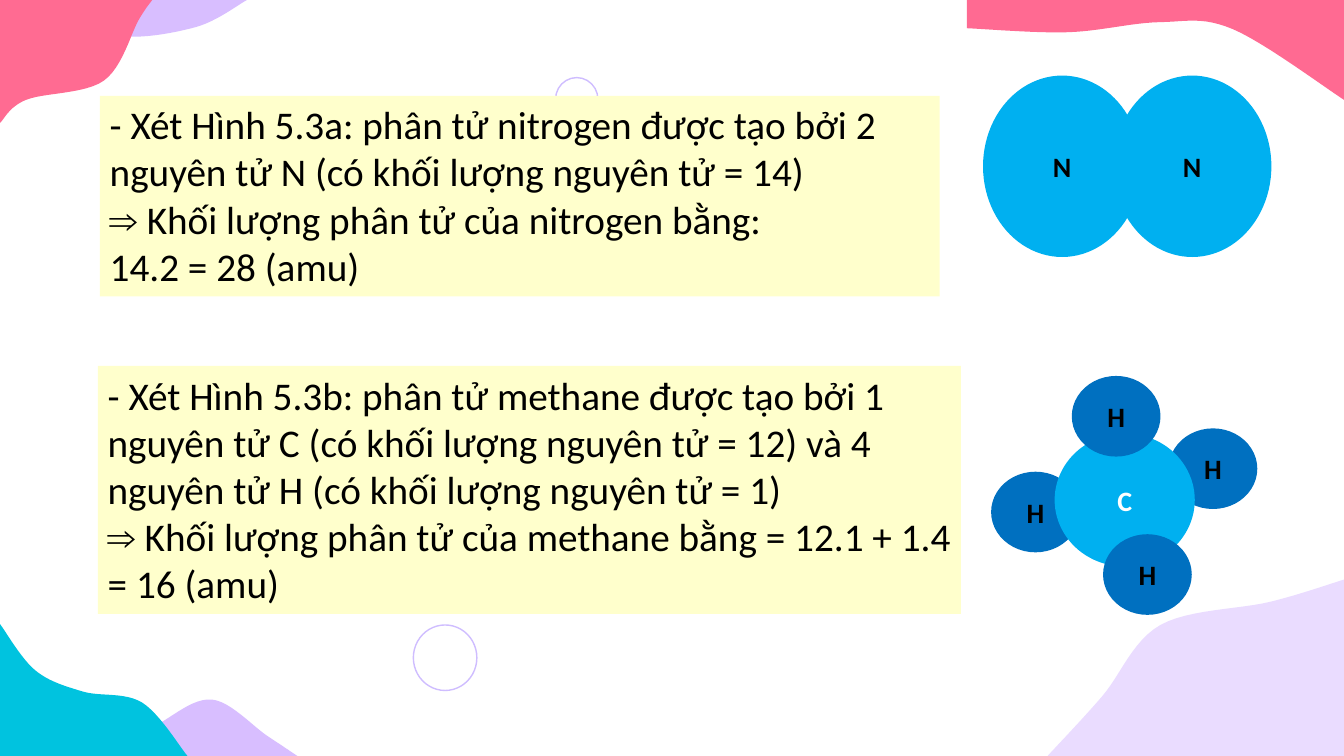
from pptx import Presentation
from pptx.dml.color import RGBColor
from pptx.enum.shapes import MSO_SHAPE
from pptx.enum.text import MSO_ANCHOR, PP_ALIGN
from pptx.util import Cm, Pt

COLORS = {
    "lilac": "D8BEFF", "rose": "FF6B92", "teal": "00C3DF", "ring": "CFBDFF",
    "lavender": "EADCFF", "coral": "FF6A92", "cream": "FFFFCC",
    "sky": "00B0F0", "blue": "0070C0", "black": "000000", "white": "FFFFFF",
}

# All content lengths are in inches.
WIDTH, HEIGHT = 13.33, 7.5
CURVE_STEPS = 12

# Colour, points on the wavy edge, corners that close the outline
BLOBS = [
    ("lilac", [(0.81, 0), (1.18, 0.35), (1.94, 0.27), (2.45, 0)], []),
    ("rose", [(0, 1.22), (0.26, 0.99), (1.03, 0.8), (1.38, 0.19), (1.51, 0)], [(0, 0)]),
    ("lilac", [(1.03, HEIGHT), (1.54, 7.2), (2.1, 6.94), (2.65, 7.3), (2.95, HEIGHT)], []),
    ("teal", [(0, 6.19), (0.35, 6.65), (0.82, 6.86), (1.41, 6.97), (1.86, HEIGHT)],
     [(0, HEIGHT)]),
    ("lavender", [(WIDTH, 5.75), (12.6, 5.97), (11.51, 6.2), (10.93, 6.91), (10.39, HEIGHT)],
     [(WIDTH, HEIGHT)]),
    ("coral", [(9.59, 0.28), (10.59, 0.32), (11.5, 0.22), (12.23, 0.29), (WIDTH, 0.99)],
     [(WIDTH, 0), (9.59, 0)]),
]
RINGS = [(4.1, 6.2, 0.63, 0.65), (5.51, 0.77, 0.42, 0.43)]

ARROW = "⇒"
EXPLANATIONS = [
    ((0.99, 0.95, 8.33, 1.99), [
        "- Xét Hình 5.3a: phân tử nitrogen được tạo bởi 2 nguyên tử N "
        "(có khối lượng nguyên tử = 14)",
        "⇒ Khối lượng phân tử của nitrogen bằng:",
        "14.2 = 28 (amu)"]),
    ((0.97, 3.63, 8.56, 2.46), [
        "- Xét Hình 5.3b: phân tử methane được tạo bởi 1 nguyên tử C "
        "(có khối lượng nguyên tử = 12) và 4 nguyên tử H (có khối lượng nguyên tử = 1)",
        "⇒ Khối lượng phân tử của methane bằng = 12.1 + 1.4 = 16 (amu)"]),
]

# Symbol: width, height, fill, text colour
ATOMS = {
    "N": (1.57, 1.8, "sky", "black"),
    "C": (1.39, 1.32, "sky", "white"),
    "H": (0.88, 0.8, "blue", "black"),
}
# Symbol, left, top, from back to front
MOLECULES = [
    [("N", 9.75, 0.75), ("N", 11.04, 0.75)],
    [("H", 11.59, 4.25), ("H", 9.83, 4.68), ("C", 10.46, 4.3),
     ("H", 10.94, 5.3), ("H", 10.63, 3.73)],
]


def lengths(*inches):
    return [Cm(value * 2.54) for value in inches]


def color(name):
    return RGBColor.from_string(COLORS[name])


def paint(shape, fill):
    shape.shadow.inherit = False
    shape.fill.solid()
    shape.fill.fore_color.rgb = color(fill)
    shape.line.fill.background()


def style(paragraph, size, text_color, alignment):
    paragraph.alignment = alignment
    paragraph.font.size = Pt(size)
    paragraph.font.name = "Calibri"
    paragraph.font.color.rgb = color(text_color)


def smooth(edge):
    """Trace a Catmull-Rom spline through the points of an edge."""
    padded = [edge[0], *edge, edge[-1]]
    points = [edge[0]]
    for a, b, c, d in zip(padded, padded[1:], padded[2:], padded[3:]):
        for step in range(1, CURVE_STEPS + 1):
            t = step / CURVE_STEPS
            points.append(tuple(
                q + t * (r - p + t * (2 * p - 5 * q + 4 * r - s
                                      + t * (3 * q - 3 * r + s - p))) / 2
                for p, q, r, s in zip(a, b, c, d)))
    return points


def add_blob(slide, fill, edge, corners):
    start, *rest = [lengths(*point) for point in smooth(edge) + corners]
    builder = slide.shapes.build_freeform(*start)
    builder.add_line_segments(rest, close=True)
    paint(builder.convert_to_shape(), fill)


def add_ring(slide, box):
    ring = slide.shapes.add_shape(MSO_SHAPE.OVAL, *lengths(*box))
    ring.shadow.inherit = False
    ring.fill.background()
    ring.line.color.rgb = color("ring")
    ring.line.width = Pt(1)


def add_explanation(slide, box, lines):
    panel = slide.shapes.add_shape(MSO_SHAPE.RECTANGLE, *lengths(*box))
    paint(panel, "cream")
    frame = panel.text_frame
    frame.word_wrap = True
    frame.vertical_anchor = MSO_ANCHOR.TOP
    for index, line in enumerate(lines):
        paragraph = frame.add_paragraph() if index else frame.paragraphs[0]
        style(paragraph, 28, "black", PP_ALIGN.LEFT)
        if line.startswith(ARROW):
            arrow = paragraph.add_run()
            arrow.text = ARROW
            arrow.font.name = "Times New Roman"
        paragraph.add_run().text = line.removeprefix(ARROW)


def add_atom(molecule, symbol, left, top):
    width, height, fill, text_color = ATOMS[symbol]
    atom = molecule.shapes.add_shape(MSO_SHAPE.FLOWCHART_CONNECTOR,
                                     *lengths(left, top, width, height))
    paint(atom, fill)
    atom.text_frame.vertical_anchor = MSO_ANCHOR.MIDDLE
    label = atom.text_frame.paragraphs[0]
    label.text = symbol
    style(label, 20, text_color, PP_ALIGN.CENTER)
    label.font.bold = True


def main():
    deck = Presentation()
    deck.slide_width, deck.slide_height = lengths(WIDTH, HEIGHT)
    slide = deck.slides.add_slide(deck.slide_layouts[6])
    for fill, edge, corners in BLOBS:
        add_blob(slide, fill, edge, corners)
    for box in RINGS:
        add_ring(slide, box)
    for box, lines in EXPLANATIONS:
        add_explanation(slide, box, lines)
    for atoms in MOLECULES:
        molecule = slide.shapes.add_group_shape()
        for symbol, left, top in atoms:
            add_atom(molecule, symbol, left, top)
    deck.save("out.pptx")


if __name__ == "__main__":
    main()
